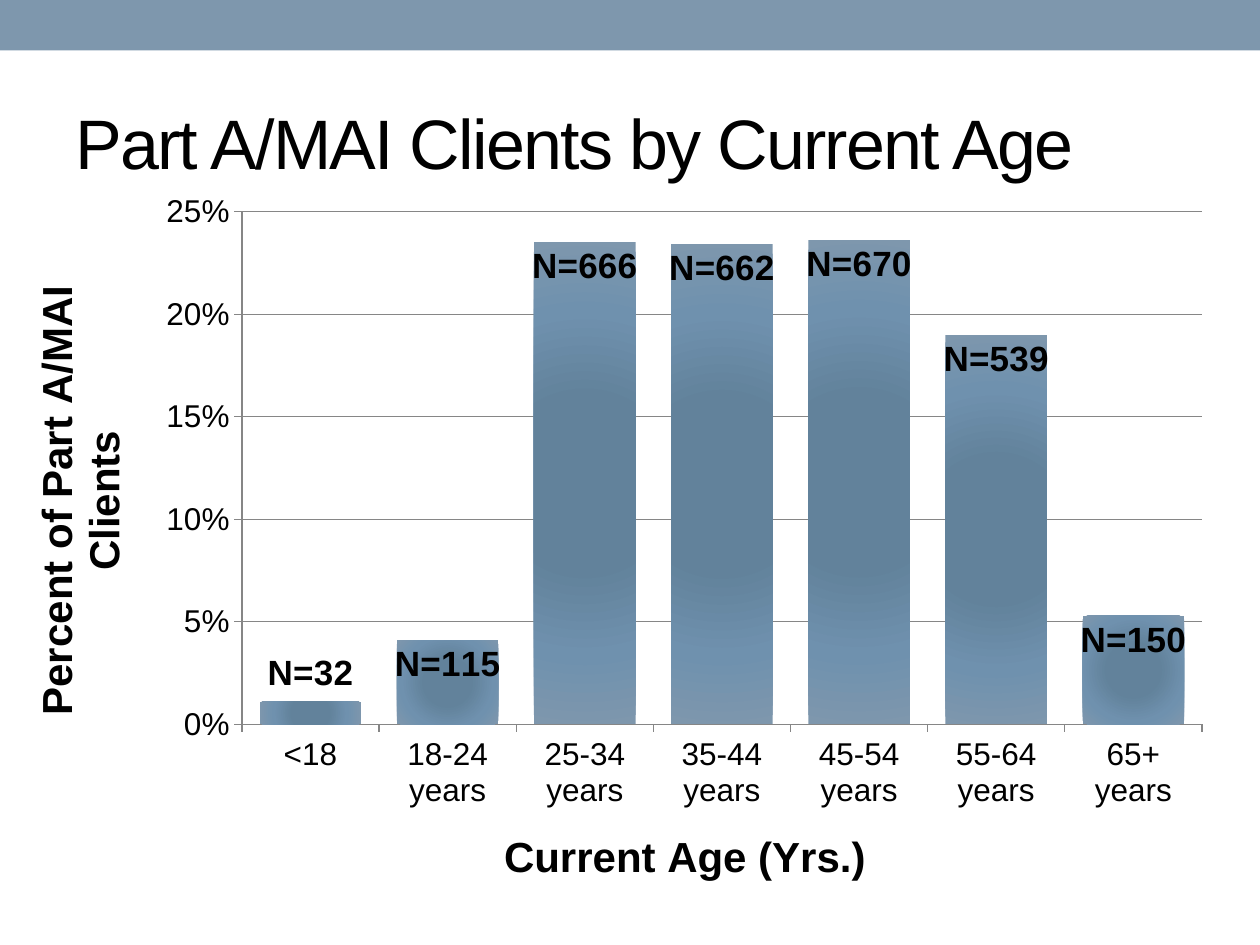
from lxml import etree
from pptx import Presentation
from pptx.chart.data import CategoryChartData as ChartData
from pptx.dml.color import RGBColor
from pptx.enum.chart import XL_CHART_TYPE as Kind, XL_LABEL_POSITION as Pos, XL_TICK_MARK as Tick
from pptx.enum.shapes import MSO_SHAPE as Shape
from pptx.enum.text import MSO_ANCHOR as Anchor
from pptx.oxml import parse_xml
from pptx.oxml.ns import nsdecls, qn
from pptx.util import Inches, Pt

BLUE = RGBColor(0x7E, 0x97, 0xAD)
MID = RGBColor(0x6F, 0x91, 0xAE)
DEEP = RGBColor(0x62, 0x82, 0x9B)
GREY = RGBColor(0x86, 0x86, 0x86)
BLACK = RGBColor(0, 0, 0)
FONT = "Arial"
WIDE, HIGH = Inches(9.74), Inches(5.85)  # size of the chart

AGES = [  # age group, percent of clients, number of clients
    ("<18", 1.1, 32),
    ("18-24 years", 4.1, 115),
    ("25-34 years", 23.5, 666),
    ("35-44 years", 23.4, 662),
    ("45-54 years", 23.6, 670),
    ("55-64 years", 19, 539),
    ("65+ years", 5.3, 150),
]


def style(font, size, bold=False):
    font.name, font.size, font.bold = FONT, Pt(size), bold
    font.color.rgb = BLACK


def write(frame, text, size=18, bold=False, spc=None):
    """Put one formatted run into a text frame."""
    run = frame.paragraphs[0].add_run()
    run.text = text
    style(run.font, size, bold)
    if spc is not None:
        run._r.get_or_add_rPr().set("spc", str(spc))


def add_band(slide):
    band = slide.shapes.add_shape(Shape.RECTANGLE, 0, 0, Inches(10), Inches(0.4))
    band.shadow.inherit = False
    band.fill.solid()
    band.fill.fore_color.rgb = BLUE
    band.line.fill.background()


def add_title(slide, text):
    box = slide.shapes.add_textbox(Inches(0.5), Inches(0.58), Inches(9.25), Inches(1.08))
    frame = box.text_frame
    frame.word_wrap = True
    frame.vertical_anchor = Anchor.MIDDLE
    write(frame, text, size=40, spc=-100)


def place(node, index, x, y, w=None, h=None):
    """Lay out a chart part by hand; lengths become fractions of the chart."""
    for old in node.findall(qn("c:layout")):
        node.remove(old)
    layout = etree.Element(qn("c:layout"))
    manual = etree.SubElement(layout, qn("c:manualLayout"))
    vals = {"layoutTarget": "inner"} if w else {}
    if node.tag != qn("c:dLbl"):
        vals.update(xMode="edge", yMode="edge")
    vals.update(x=x / WIDE, y=y / HIGH)
    if w:
        vals.update(w=w / WIDE, h=h / HIGH)
    for tag, val in vals.items():
        etree.SubElement(manual, qn("c:" + tag)).set("val", str(val))
    node.insert(index, layout)


def set_axis(axis, text, x, y, turn=0):
    axis.major_tick_mark, axis.minor_tick_mark = Tick.OUTSIDE, Tick.NONE
    axis.format.line.color.rgb = GREY
    style(axis.tick_labels.font, 18)
    title = axis.axis_title
    write(title.text_frame, text, size=24, bold=True)
    body = title._element.find(".//" + qn("a:bodyPr"))
    body.set("rot", str(turn * 60000))
    body.set("vert", "horz")
    place(title._element, 1, x, y)


def shade(series):
    """Fill the bars with a round gradient, deep in the middle."""
    series.format.fill.solid()
    props = series._element.find(qn("c:spPr"))
    stops = "".join(
        f'<a:gs pos="{pos}"><a:srgbClr val="{color}"/></a:gs>'
        for pos, color in ((0, DEEP), (35000, DEEP), (70000, MID), (100000, BLUE))
    )
    grad = parse_xml(
        f'<a:gradFill {nsdecls("a")} rotWithShape="1"><a:gsLst>{stops}</a:gsLst>'
        '<a:path path="circle"><a:fillToRect l="50000" t="50000" r="50000" b="50000"/>'
        "</a:path></a:gradFill>"
    )
    props.replace(props.find(qn("a:solidFill")), grad)


def add_labels(plot, series):
    plot.has_data_labels = True
    labels = plot.data_labels
    labels.show_value = True
    labels.number_format, labels.number_format_is_linked = "0.00%", False
    labels.position = Pos.INSIDE_END
    style(labels.font, 20, True)
    for i, (_, _, count) in enumerate(AGES):
        label = series.points[i].data_label
        write(label.text_frame, f"N={count}", size=20, bold=True)
        label.position = Pos.INSIDE_END
    # The first bar is too low to hold its label, so lift it above
    first = series._element.find(".//" + qn("c:dLbl"))
    place(first, 1, 0, Inches(-0.42))


def add_bars(slide):
    data = ChartData(number_format="0.0%")
    data.categories = [age for age, _, _ in AGES]
    data.add_series("Series 1", [round(share / 100, 3) for _, share, _ in AGES])
    chart = slide.shapes.add_chart(
        Kind.COLUMN_STACKED, 0, Inches(1.42), WIDE, HIGH, data
    ).chart
    chart.has_legend = chart.has_title = False
    style(chart.font, 18)

    plot = chart.plots[0]
    plot.gap_width, plot.overlap, plot.vary_by_categories = 35, 100, False
    series = plot.series[0]
    shade(series)
    add_labels(plot, series)

    set_axis(chart.category_axis, "Current Age (Yrs.)", Inches(3.94), Inches(5.1))
    axis = chart.value_axis
    set_axis(axis, "Percent of Part A/MAI Clients", Inches(0.17), Inches(0.79), turn=-90)
    axis.minimum_scale, axis.maximum_scale, axis.major_unit = 0, 0.25, 0.05
    axis.tick_labels.number_format = "0%"
    axis.tick_labels.number_format_is_linked = False
    axis.has_major_gridlines = True
    axis.major_gridlines.format.line.color.rgb = GREY
    area = chart._chartSpace.find(".//" + qn("c:plotArea"))
    place(area, 0, Inches(1.92), Inches(0.26), Inches(7.62), Inches(4.07))


def main():
    deck = Presentation()
    deck.slide_width, deck.slide_height = Inches(10), Inches(7.5)
    slide = deck.slides.add_slide(deck.slide_layouts[6])
    add_band(slide)
    add_title(slide, "Part A/MAI Clients by Current Age")
    add_bars(slide)
    deck.save("out.pptx")


if __name__ == "__main__":
    main()
